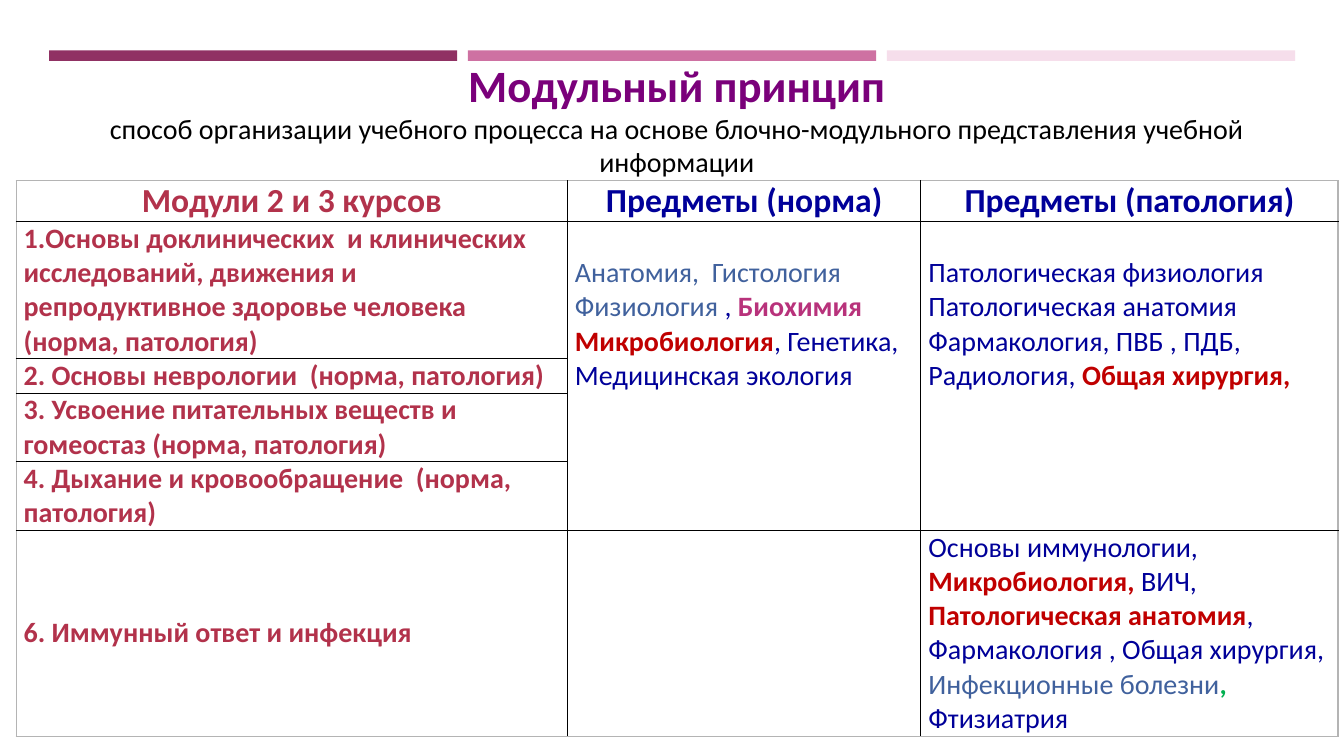
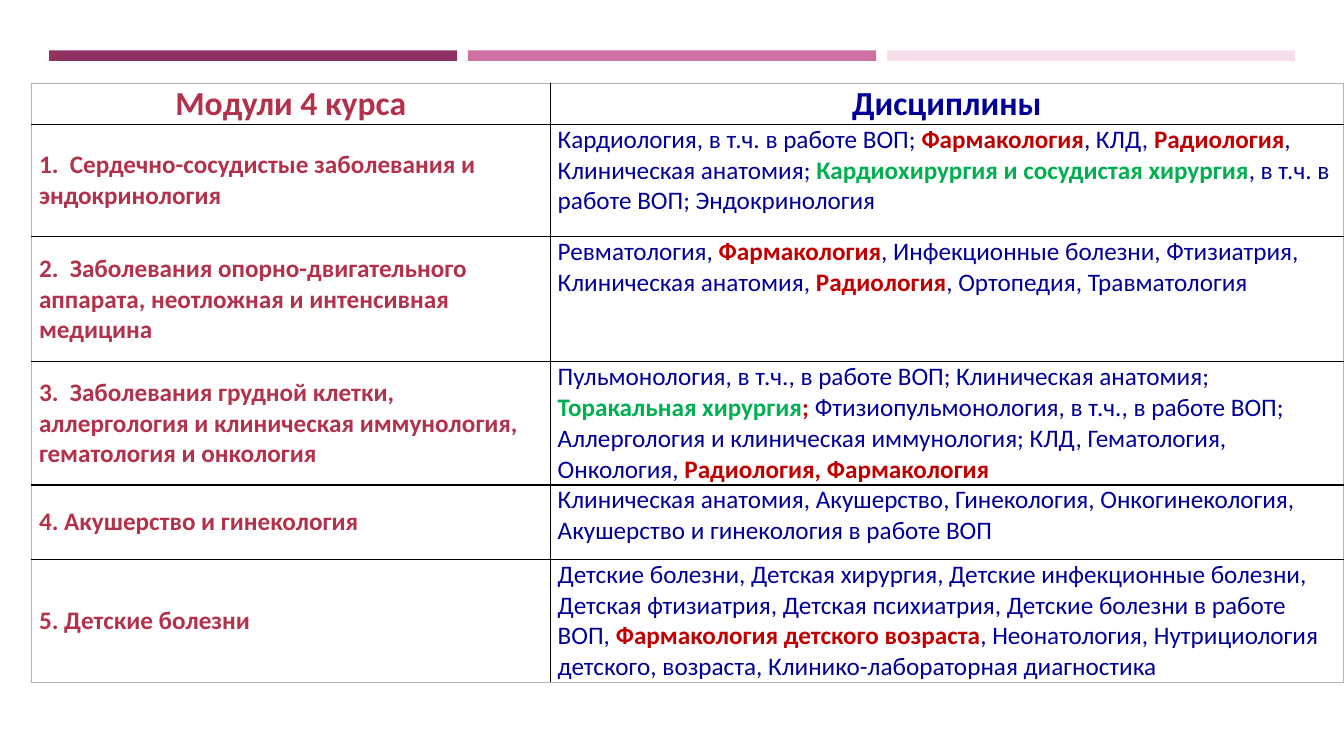
from pptx import Presentation
from pptx.dml.color import RGBColor
from pptx.enum.shapes import MSO_SHAPE as Shape
from pptx.enum.text import MSO_ANCHOR as Anchor, MSO_AUTO_SIZE as Fit, PP_ALIGN as Align
from pptx.oxml.xmlchemy import OxmlElement as Node
from pptx.util import Pt

PLUM = RGBColor(0x90, 0x31, 0x63)
MAUVE = RGBColor(0xCE, 0x71, 0xA2)
BLUSH = RGBColor(0xF6, 0xDE, 0xEB)
PURPLE = RGBColor(0x7A, 0x00, 0x7A)
BLACK = RGBColor(0x00, 0x00, 0x00)
GREY = RGBColor(0xB4, 0xB4, 0xB4)
ROSE = RGBColor(0xB2, 0x32, 0x4B)
NAVY = RGBColor(0x00, 0x00, 0x99)
STEEL = RGBColor(0x40, 0x61, 0x9D)
PINK = RGBColor(0xB8, 0x32, 0x7B)
RED = RGBColor(0xC0, 0x00, 0x00)
GREEN = RGBColor(0x00, 0xB0, 0x50)
STRONG = (ROSE, PINK, RED, GREEN)
FONT = "Calibri"


def border(cell, side, color):
    line = Node(f"a:ln{side}")
    line.set("w", str(Pt(1)))
    fill, rgb = Node("a:solidFill"), Node("a:srgbClr")
    rgb.set("val", str(color))
    fill.append(rgb)
    line.append(fill)
    cell._tc.get_or_add_tcPr().append(line)


def grid(slide, left, top, cols, rows, size, heads, body):
    """Add a table; a body cell is a list of paragraphs, each a list of
    (text, colour) runs, or a plain string for a module name."""
    data = [[[[(head, color)]] for head, color in zip(heads, (ROSE, NAVY, NAVY))]]
    data += body
    frame = slide.shapes.add_table(len(rows), len(cols), Pt(left), Pt(top),
                                   Pt(sum(cols)), Pt(sum(rows)))
    table = frame.table
    table.first_row = table.horz_banding = False
    for col, width in zip(table.columns, cols):
        col.width = Pt(width)
    for row, height in zip(table.rows, rows):
        row.height = Pt(height)
    for r, line in enumerate(data):
        for c, paras in enumerate(line):
            cell = table.cell(r, c)
            outer = {"L": c == 0, "R": c == len(cols) - 1,
                     "T": r == 0, "B": r == len(rows) - 1}
            for side, edge in outer.items():
                border(cell, side, GREY if edge else BLACK)
            cell.fill.background()
            cell.margin_left = cell.margin_right = Pt(5.4)
            cell.margin_top = cell.margin_bottom = 0
            cell.vertical_anchor = Anchor.MIDDLE if r == 0 or c == 0 else Anchor.TOP
            if isinstance(paras, str):
                paras = [[(paras, ROSE)]]
            text = cell.text_frame
            for i, runs in enumerate(paras or []):
                para = text.add_paragraph() if i else text.paragraphs[0]
                para.alignment = Align.LEFT if r else Align.CENTER
                para.font.name = FONT
                para.font.size = Pt(size if r else 24)
                for words, color in runs:
                    run = para.add_run()
                    run.text = words
                    run.font.color.rgb = color
                    run.font.bold = r == 0 or color in STRONG
    return table


prs = Presentation()
prs.slide_width, prs.slide_height = Pt(960), Pt(540)
first = prs.slides.add_slide(prs.slide_layouts[5])
second = prs.slides.add_slide(prs.slide_layouts[6])

# Bands live on the master, so every slide shows them
for i, color in enumerate((PLUM, MAUVE, BLUSH)):
    band = first.shapes.add_shape(Shape.RECTANGLE, Pt(35 + 299.25 * i), Pt(36),
                                  Pt(291.6), Pt(7.5))
    band.shadow.inherit = False
    band.fill.solid()
    band.fill.fore_color.rgb = color
    band.line.fill.background()
    band.element.nvSpPr.cNvPr.set("id", str(20 + i))
    prs.slide_master.shapes.element.append(band.element)

# Slide 1: years 2 and 3
title = first.shapes.title
title.left, title.top, title.width, title.height = Pt(26.5), Pt(37.5), Pt(914), Pt(94.5)
text = title.text_frame
text.word_wrap = True
text.auto_size = Fit.NONE
text.vertical_anchor = Anchor.TOP
text.text = ("Модульный принцип\nспособ организации учебного процесса на основе "
             "блочно-модульного представления учебной информации")
for para, size, color in zip(text.paragraphs, (32, 20), (PURPLE, BLACK)):
    para.alignment = Align.CENTER
    para.font.name = FONT
    para.font.size = Pt(size)
    para.font.bold = size == 32
    para.font.color.rgb = color

norm = [
    [("Анатомия,  Гистология", STEEL)],
    [("Физиология ", STEEL), (", ", NAVY), ("Биохимия", PINK)],
    [("Микробиология", RED), (", Генетика,", NAVY)],
    [("Медицинская экология", NAVY)],
]
illness = [
    [("Патологическая физиология", NAVY)],
    [("Патологическая анатомия", NAVY)],
    [("Фармакология, ПВБ , ПДБ,", NAVY)],
    [("Радиология, ", NAVY), ("Общая хирургия,", RED)],
]
immune = [
    [("Основы иммунологии, ", NAVY), ("Микробиология, ", RED), ("ВИЧ,", NAVY)],
    [("Патологическая анатомия", RED), (",", NAVY)],
    [("Фармакология , Общая хирургия, ", NAVY), ("Инфекционные болезни", STEEL),
     (", ", GREEN), ("Фтизиатрия", NAVY)],
]
table = grid(
    first, 11.5, 129, (393.8, 252.5, 298), (29.3, 95.7, 24, 48, 48, 143.8), 20,
    ("Модули 2 и 3 курсов", "Предметы (норма)", "Предметы (патология)"),
    [
        ["1.Основы доклинических  и клинических исследований, движения и "
         "репродуктивное здоровье человека (норма, патология)", norm, illness],
        ["2. Основы неврологии  (норма, патология)", None, None],
        ["3. Усвоение питательных веществ и гомеостаз (норма, патология)", None, None],
        ["4. Дыхание и кровообращение  (норма, патология)", None, None],
        ["6. Иммунный ответ и инфекция", None, immune],
    ])
for c in (1, 2):
    cell = table.cell(1, c)
    cell.merge(table.cell(4, c))
    cell.margin_top = Pt(24.4)

# Slide 2: year 4
grid(
    second, 22.5, 59.5, (370.5, 566.7), (29.3, 80.4, 89.3, 86.4, 53.2, 86.4), 18,
    ("Модули 4 курса", "Дисциплины"),
    [
        ["1.  Сердечно-сосудистые заболевания и эндокринология",
         [[("Кардиология, в т.ч. в работе ВОП; ", NAVY), ("Фармакология", RED),
           (", КЛД, ", NAVY), ("Радиология", RED), (", Клиническая анатомия; ", NAVY),
           ("Кардиохирургия и сосудистая хирургия", GREEN),
           (", в т.ч. в работе ВОП; Эндокринология", NAVY)]]],
        ["2.  Заболевания опорно-двигательного аппарата, неотложная и "
         "интенсивная медицина",
         [[("Ревматология, ", NAVY), ("Фармакология", RED),
           (", Инфекционные болезни, Фтизиатрия, Клиническая анатомия, ", NAVY),
           ("Радиология", RED), (", Ортопедия, Травматология", NAVY)]]],
        ["3.  Заболевания грудной клетки, аллергология и клиническая "
         "иммунология, гематология и онкология",
         [[("Пульмонология, в т.ч., в работе ВОП; Клиническая анатомия; ", NAVY),
           ("Торакальная хирургия", GREEN), ("; ", RED),
           ("Фтизиопульмонология, в т.ч., в работе ВОП; Аллергология и клиническая "
            "иммунология; КЛД, Гематология, Онкология, ", NAVY),
           ("Радиология, Фармакология", RED)]]],
        ["4. Акушерство и гинекология",
         [[("Клиническая анатомия, Акушерство, Гинекология, Онкогинекология, "
            "Акушерство и гинекология в работе ВОП", NAVY)]]],
        ["5. Детские болезни",
         [[("Детские болезни, Детская хирургия, Детские инфекционные болезни, "
            "Детская фтизиатрия, Детская психиатрия, Детские болезни в работе "
            "ВОП, ", NAVY),
           ("Фармакология детского возраста", RED),
           (", Неонатология, Нутрициология детского, возраста, "
            "Клинико-лабораторная диагностика", NAVY)]]],
    ])

prs.save("out.pptx")
